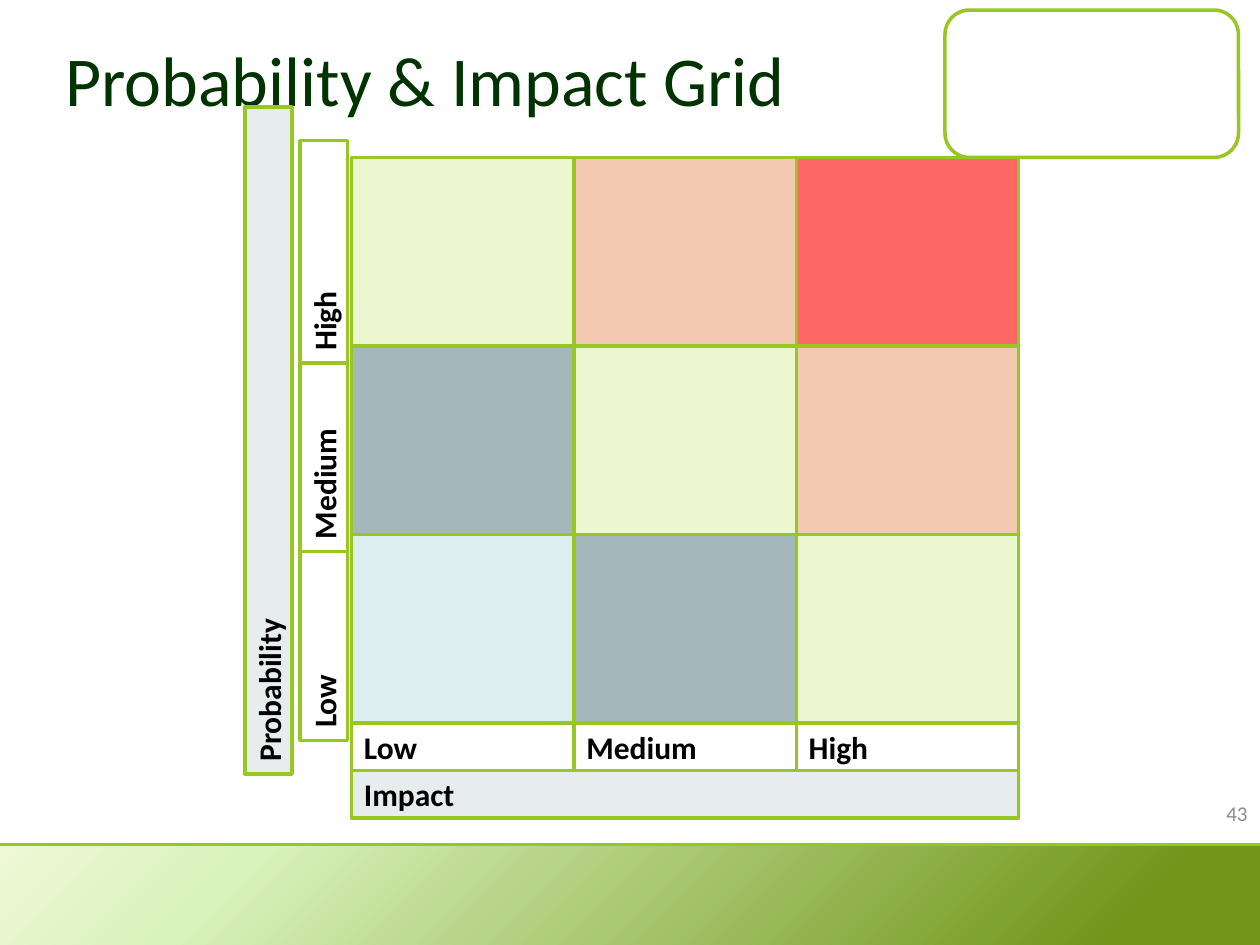
import copy
from dataclasses import dataclass

import lxml.etree
import pptx
import pptx.util
import pptx.dml.color
import pptx.enum.shapes
import pptx.enum.text
import pptx.oxml.ns

Inches = pptx.util.Inches
Pt = pptx.util.Pt
Shape = pptx.enum.shapes.MSO_SHAPE
Align = pptx.enum.text.PP_ALIGN
Anchor = pptx.enum.text.MSO_ANCHOR
qn = pptx.oxml.ns.qn


@dataclass(frozen=True)
class Theme:
    font: str = "Calibri"
    title: str = "003300"
    text: str = "000000"
    muted: str = "8C8C8C"
    line: str = "98C723"
    white: str = "FFFFFF"
    axis: str = "E7ECED"
    band: tuple = ((0, "EEF8D5"), (0.19, "DAF2BC"), (0.89, "72951A"))
    risk: tuple = ("DEEFF1", "A4B7BB", "ECF7D0", "F3C9B1", "FF6666")
    big: int = 40
    body: int = 18
    small: int = 12
    edge: float = 2
    rule: float = 1.5


THEME = Theme()
LEVELS = ("Low", "Medium", "High")
LEFT, TOP = 2.79, 1.25
CELL_W, CELL_H, BAR = 1.765, 1.497, 0.375
SIDE_X, AXIS_X = 2.57, 2.13


def rgb(code):
    return pptx.dml.color.RGBColor.from_string(code)


def apply(target, values):
    for name, value in values.items():
        setattr(target, name, value)


def write(shape, text, size, color, bold=False, align=Align.LEFT):
    frame = shape.text_frame
    apply(frame, {
        "text": text,
        "word_wrap": True,
        "auto_size": pptx.enum.text.MSO_AUTO_SIZE.NONE,
        "vertical_anchor": Anchor.MIDDLE,
    })
    para = frame.paragraphs[0]
    para.alignment = align
    apply(para.font, {"name": THEME.font, "size": Pt(size), "bold": bold})
    para.font.color.rgb = rgb(color)


def add_box(slide, x, y, w, h, fill, kind=Shape.RECTANGLE):
    box = slide.shapes.add_shape(kind, Inches(x), Inches(y), Inches(w), Inches(h))
    box.shadow.inherit = False
    box.fill.solid()
    box.fill.fore_color.rgb = rgb(fill)
    box.line.color.rgb = rgb(THEME.line)
    box.line.width = Pt(THEME.edge)
    return box


def add_label(slide, text, x, y, w, fill, turn=0):
    box = add_box(slide, x, y, w, BAR, fill)
    box.rotation = turn
    write(box, text, THEME.body, THEME.text, bold=True)


def add_side(slide, text, mid_x, mid_y, length, fill):
    """Place a label that reads upwards, centred on a point."""
    add_label(slide, text, mid_x - length / 2, mid_y - BAR / 2, length, fill, 270)


def add_title(slide, text):
    title = slide.shapes.title
    apply(title, {"left": Inches(0.42), "top": Inches(0),
                  "width": Inches(6.75), "height": Inches(1.25)})
    write(title, text, THEME.big, THEME.title)


def add_band(slide):
    band = add_box(slide, 0, 6.71, 10, 0.79, THEME.white)
    band.line.fill.background()
    band.fill.gradient()
    band.fill.gradient_angle = 315
    stops = band._element.spPr.find(".//" + qn("a:gsLst"))
    stops.append(copy.deepcopy(stops[-1]))
    for stop, (place, color) in zip(band.fill.gradient_stops, THEME.band):
        stop.position = place
        stop.color.rgb = rgb(color)

    rule = slide.shapes.add_connector(
        pptx.enum.shapes.MSO_CONNECTOR.STRAIGHT,
        Inches(0), Inches(6.7), Inches(10), Inches(6.7))
    rule.line.color.rgb = rgb(THEME.line)
    rule.line.width = Pt(THEME.rule)
    lxml.etree.SubElement(rule._element.spPr, qn("a:effectLst"))


def add_axes(slide):
    base = TOP + 3 * CELL_H
    for i, level in enumerate(LEVELS):
        add_label(slide, level, LEFT + i * CELL_W, base, CELL_W, THEME.white)
    add_label(slide, "Impact", LEFT, base + BAR, 3 * CELL_W, THEME.axis)
    for i, level in enumerate(LEVELS):
        mid = base - (i + 0.5) * CELL_H
        add_side(slide, level, SIDE_X, mid, CELL_W, THEME.white)
    add_side(slide, "Probability", AXIS_X, TOP + 1.5 * CELL_H, 3 * CELL_W, THEME.axis)


def add_grid(slide):
    """Colour each cell by the sum of its impact and probability levels."""
    for col in range(3):
        for row in range(3):
            add_box(slide, LEFT + col * CELL_W, TOP + (2 - row) * CELL_H,
                    CELL_W, CELL_H, THEME.risk[col + row])


def add_number(slide, text):
    box = slide.shapes.add_textbox(Inches(7.67), Inches(6.25), Inches(2.33), Inches(0.4))
    write(box, text, THEME.small, THEME.muted, align=Align.RIGHT)


def main():
    deck = pptx.Presentation()
    apply(deck, {"slide_width": Inches(10), "slide_height": Inches(7.5)})
    slide = deck.slides.add_slide(deck.slide_layouts[5])
    add_box(slide, 7.5, 0.08, 2.33, 1.17, THEME.white, Shape.ROUNDED_RECTANGLE)
    add_band(slide)
    add_title(slide, "Probability & Impact Grid")
    add_axes(slide)
    add_grid(slide)
    add_number(slide, "43")
    deck.save("out.pptx")


if __name__ == "__main__":
    main()
